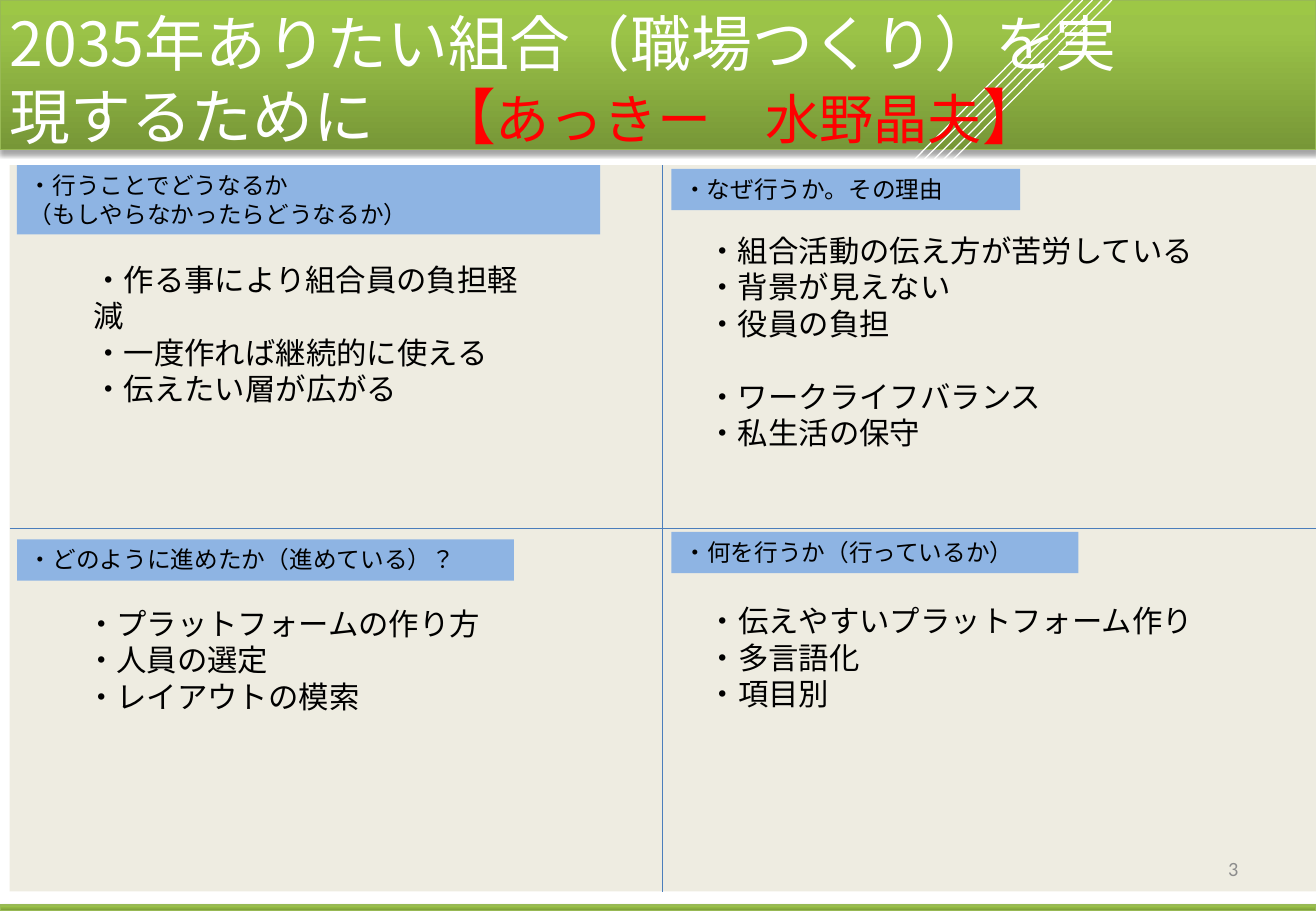
from lxml.etree import SubElement
from pptx import Presentation
from pptx.dml.color import RGBColor
from pptx.enum.lang import MSO_LANGUAGE_ID
from pptx.enum.shapes import MSO_CONNECTOR, MSO_SHAPE
from pptx.enum.text import MSO_ANCHOR, MSO_AUTO_SIZE, PP_ALIGN
from pptx.oxml import parse_xml
from pptx.oxml.ns import nsdecls, qn
from pptx.util import Inches, Pt

COLORS = {
    "white": "FFFFFF", "black": "000000", "red": "FF0000", "grey": "8C8C8C",
    "panel": "EEECE1", "label": "8EB4E3", "divider": "4B7EBC",
    "band_edge": "98B955", "band_dark": "779737",
    "band_mid": "9BC348", "band_light": "9DC746",
}
JAPANESE = "Noto Sans CJK JP"
WIDTH, HEIGHT = 10.83, 7.5
LEFT, TOP = 0.08, 1.36
COLUMN, ROW = 5.375, 2.99

QUADRANTS = [
    dict(column=0, row=0, label_at=(0.06, 0), label_size=(4.8, 0.57),
         label=["・行うことでどうなるか", "（もしやらなかったらどうなるか）"],
         points_at=(0.59, 0.74), points_size=(3.88, 1.01),
         groups=[["・作る事により組合員の負担軽減", "・一度作れば継続的に使える",
                  "・伝えたい層が広がる"]]),
    dict(column=1, row=0, label_at=(0.07, 0.03), label_size=(2.87, 0.34),
         label=["・なぜ行うか。その理由"],
         points_at=(0.27, 0.5), points_size=(4.96, 1.92),
         groups=[["・組合活動の伝え方が苦労している", "・背景が見えない", "・役員の負担"],
                 ["・ワークライフバランス", "・私生活の保守"]]),
    dict(column=0, row=1, label_at=(0.06, 0.09), label_size=(4.09, 0.34),
         label=["・どのように進めたか（進めている）？"],
         points_at=(0.53, 0.58), points_size=(4.33, 1.01),
         groups=[["・プラットフォームの作り方", "・人員の選定", "・レイアウトの模索"]]),
    dict(column=1, row=1, label_at=(0.07, 0.03), label_size=(3.35, 0.34),
         label=["・何を行うか（行っているか）"],
         points_at=(0.27, 0.56), points_size=(4.49, 1.01),
         groups=[["・伝えやすいプラットフォーム作り", "・多言語化", "・項目別"]]),
]


def color(name):
    return RGBColor.from_string(COLORS[name])


def write(paragraph, text, *, size, font=JAPANESE, ink="black",
          align=PP_ALIGN.LEFT, before=0):
    paragraph.alignment = align
    if before:
        paragraph.space_before = Pt(before)
    run = paragraph.add_run()
    run.text = text
    run.font.size = Pt(size)
    run.font.name = font
    run.font.color.rgb = color(ink)
    run.font.language_id = MSO_LANGUAGE_ID.JAPANESE
    SubElement(run.font._element, qn("a:ea"), typeface=font)


def set_frame(frame, anchor=MSO_ANCHOR.TOP, fit=MSO_AUTO_SIZE.NONE):
    frame.word_wrap = True
    frame.auto_size = fit
    frame.vertical_anchor = anchor
    return frame


def next_paragraph(frame):
    first = frame.paragraphs[0]
    return frame.add_paragraph() if first.runs else first


def add_box(slide, left, top, width, height, fill=None):
    box = slide.shapes.add_shape(MSO_SHAPE.RECTANGLE, Inches(left), Inches(top),
                                 Inches(width), Inches(height))
    box.shadow.inherit = False
    box.line.fill.background()
    if fill:
        box.fill.solid()
        box.fill.fore_color.rgb = color(fill)
    return box


def add_text_box(slide, left, top, width, height):
    return slide.shapes.add_textbox(Inches(left), Inches(top), Inches(width),
                                    Inches(height)).text_frame


def add_band(slide, top, height):
    band = add_box(slide, 0, top, WIDTH, height)
    band.line.color.rgb = color("band_edge")
    band.line.width = Pt(0.75)
    stops = "".join(
        f'<a:gs pos="{share * 1000}"><a:srgbClr val="{COLORS[name]}"/></a:gs>'
        for share, name in [(0, "band_dark"), (80, "band_mid"), (100, "band_light")])
    properties = band._element.spPr
    properties.find(qn("a:prstGeom")).addnext(parse_xml(
        f'<a:gradFill {nsdecls("a")} rotWithShape="1"><a:gsLst>{stops}</a:gsLst>'
        '<a:lin ang="16200000" scaled="0"/></a:gradFill>'))
    properties.find(qn("a:effectLst")).append(parse_xml(
        f'<a:outerShdw {nsdecls("a")} blurRad="{Pt(3.1)}" dist="{Pt(1.8)}" '
        f'dir="5400000" rotWithShape="0"><a:srgbClr val="{COLORS["black"]}">'
        '<a:alpha val="35000"/></a:srgbClr></a:outerShdw>'))


def add_line(slide, start, end, ink):
    line = slide.shapes.add_connector(MSO_CONNECTOR.STRAIGHT,
                                      *map(Inches, start + end))
    line.line.color.rgb = color(ink)
    line.line.width = Pt(0.75)
    SubElement(line._element.spPr, qn("a:effectLst"))
    return line


def add_header(slide):
    add_band(slide, 0, 1.23)
    for stripe in range(5):
        foot = 7.29 + 0.08 * stripe
        add_line(slide, (foot, 1.55), (foot + 1.54, 0), "white")
    add_band(slide, 7.45, 0.05)

    title = slide.shapes.title
    title.left, title.top = Inches(-0.02), Inches(-0.03)
    title.width, title.height = Inches(9.45), Inches(1.36)
    slide.shapes._spTree.append(title._element)
    heading = set_frame(title.text_frame, MSO_ANCHOR.MIDDLE).paragraphs[0]
    for text, size, ink in [
        ("2035年ありたい組合（職場つくり）を実現するために　", 36, "white"),
        ("【", 36, "red"), ("あっきー　水野晶夫", 32, "red"), ("】", 36, "red"),
    ]:
        write(heading, text, size=size, ink=ink)


def add_panel(slide):
    panel = add_box(slide, LEFT, TOP, 2 * COLUMN, 2 * ROW, "panel")
    middle_x, middle_y = LEFT + COLUMN, TOP + ROW
    for start, end, sides in [
        ((middle_x, TOP), (middle_x, TOP + 2 * ROW), (0, 2)),
        ((LEFT, middle_y), (LEFT + 2 * COLUMN, middle_y), (1, 3)),
    ]:
        divider = add_line(slide, start, end, "divider")
        divider.begin_connect(panel, sides[0])
        divider.end_connect(panel, sides[1])


def add_quadrant(slide, column, row, label_at, label_size, label,
                 points_at, points_size, groups):
    x, y = LEFT + column * COLUMN, TOP + row * ROW
    question = add_box(slide, x + label_at[0], y + label_at[1], *label_size, "label")
    frame = set_frame(question.text_frame, fit=MSO_AUTO_SIZE.SHAPE_TO_FIT_TEXT)
    for text in label:
        write(next_paragraph(frame), text, size=14)

    points = add_text_box(slide, x + points_at[0], y + points_at[1], *points_size)
    set_frame(points, fit=MSO_AUTO_SIZE.SHAPE_TO_FIT_TEXT)
    for group_index, group in enumerate(groups):
        for point_index, text in enumerate(group):
            opens_group = group_index > 0 and point_index == 0
            write(next_paragraph(points), text, size=18, font="Arial",
                  before=21.6 if opens_group else 0)


def add_page_number(slide):
    frame = set_frame(add_text_box(slide, 7.76, 6.95, 2.53, 0.4), MSO_ANCHOR.MIDDLE)
    write(frame.paragraphs[0], "3", size=12, font="Calibri", ink="grey",
          align=PP_ALIGN.RIGHT)


def main():
    deck = Presentation()
    deck.slide_width, deck.slide_height = Inches(WIDTH), Inches(HEIGHT)
    slide = deck.slides.add_slide(deck.slide_layouts[5])
    add_header(slide)
    add_panel(slide)
    for quadrant in QUADRANTS:
        add_quadrant(slide, **quadrant)
    add_page_number(slide)
    deck.save("out.pptx")


if __name__ == "__main__":
    main()
